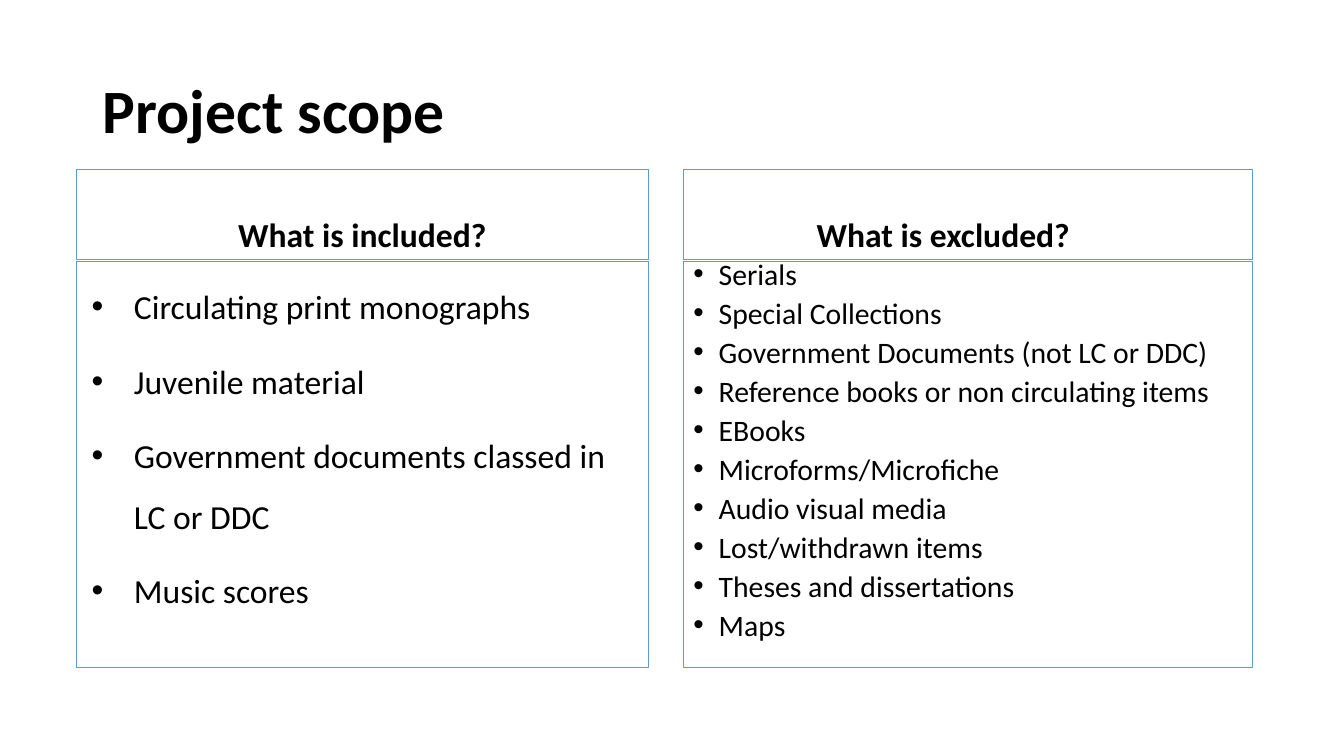
from dataclasses import dataclass

from pptx import Presentation
from pptx.dml.color import RGBColor
from pptx.enum.shapes import MSO_SHAPE
from pptx.enum.text import MSO_ANCHOR, MSO_AUTO_SIZE, PP_ALIGN
from pptx.oxml.xmlchemy import OxmlElement
from pptx.shapes.autoshape import Shape
from pptx.slide import Slide
from pptx.text.text import TextFrame, _Paragraph as Paragraph
from pptx.util import Pt

BLACK = RGBColor(0x00, 0x00, 0x00)
BLUE = RGBColor(0x5B, 0x9B, 0xD5)
FONT = "Calibri"
EMU_PER_PX = 9144
HEADING_TOP, HEADING_HEIGHT = 168, 90
LIST_TOP, LIST_HEIGHT = 259, 403


@dataclass(frozen=True)
class Column:
    left: int
    width: int
    heading: str
    items: tuple[str, ...]
    font_size: float
    line_spacing: float
    margin: int
    hanging: int


COLUMNS = (
    Column(76, 567, "What is included?", (
        "Circulating print monographs",
        "Juvenile material",
        "Government documents classed in LC or DDC",
        "Music scores",
    ), 24, 1.5, 47, 42),
    Column(678, 564, "What is excluded?\t", (
        "Serials",
        "Special Collections",
        "Government Documents (not LC or DDC)",
        "Reference books or non circulating items",
        "EBooks",
        "Microforms/Microfiche",
        "Audio visual media",
        "Lost/withdrawn items",
        "Theses and dissertations",
        "Maps",
    ), 21.2, 0.7, 25, 25),
)


def px(length: int) -> int:
    return length * EMU_PER_PX


def place(shape: Shape, left: int, top: int, width: int, height: int) -> None:
    shape.left, shape.top = px(left), px(top)
    shape.width, shape.height = px(width), px(height)


def format_text(text_frame: TextFrame, size: float, bold: bool, line_spacing: float,
                space_before: float, alignment: PP_ALIGN) -> None:
    text_frame.word_wrap = True
    text_frame.auto_size = MSO_AUTO_SIZE.NONE
    for paragraph in text_frame.paragraphs:
        paragraph.alignment = alignment
        paragraph.line_spacing = line_spacing
        paragraph.space_before = Pt(space_before)
        for run in paragraph.runs:
            run.font.name = FONT
            run.font.size = Pt(size)
            run.font.bold = bold
            run.font.color.rgb = BLACK


def add_bullet(paragraph: Paragraph, margin: int, hanging: int) -> None:
    properties = paragraph._p.get_or_add_pPr()
    properties.set("marL", str(px(margin)))
    properties.set("indent", str(-px(hanging)))
    font = OxmlElement("a:buFont")
    font.set("typeface", "Arial")
    bullet = OxmlElement("a:buChar")
    bullet.set("char", "•")
    properties.extend((font, bullet))


def add_box(slide: Slide, column: Column, top: int, height: int,
            text: str, anchor: MSO_ANCHOR) -> TextFrame:
    box = slide.shapes.add_shape(MSO_SHAPE.RECTANGLE, 0, 0, 0, 0)
    place(box, column.left, top, column.width, height)
    box.shadow.inherit = False
    box.fill.background()
    box.line.color.rgb = BLUE
    box.line.width = Pt(0.75)
    box.text_frame.text = text
    box.text_frame.vertical_anchor = anchor
    return box.text_frame


def add_column(slide: Slide, column: Column) -> None:
    heading = add_box(slide, column, HEADING_TOP, HEADING_HEIGHT,
                      column.heading, MSO_ANCHOR.BOTTOM)
    format_text(heading, 24, True, 0.9, 10, PP_ALIGN.CENTER)

    item_list = add_box(slide, column, LIST_TOP, LIST_HEIGHT,
                        "\n".join(column.items), MSO_ANCHOR.TOP)
    format_text(item_list, column.font_size, False, column.line_spacing, 10, PP_ALIGN.LEFT)
    for paragraph in item_list.paragraphs:
        add_bullet(paragraph, column.margin, column.hanging)


def add_title(slide: Slide, text: str) -> None:
    title = slide.shapes.title
    place(title, 92, 40, 1150, 145)
    title.text_frame.text = text
    title.text_frame.vertical_anchor = MSO_ANCHOR.MIDDLE
    format_text(title.text_frame, 44, True, 0.9, 0, PP_ALIGN.LEFT)


def main() -> None:
    presentation = Presentation()
    presentation.slide_width = px(1333)
    presentation.slide_height = px(750)
    slide = presentation.slides.add_slide(presentation.slide_layouts.get_by_name("Title Only"))
    add_title(slide, "Project scope")
    for column in COLUMNS:
        add_column(slide, column)
    presentation.save("out.pptx")


if __name__ == "__main__":
    main()
